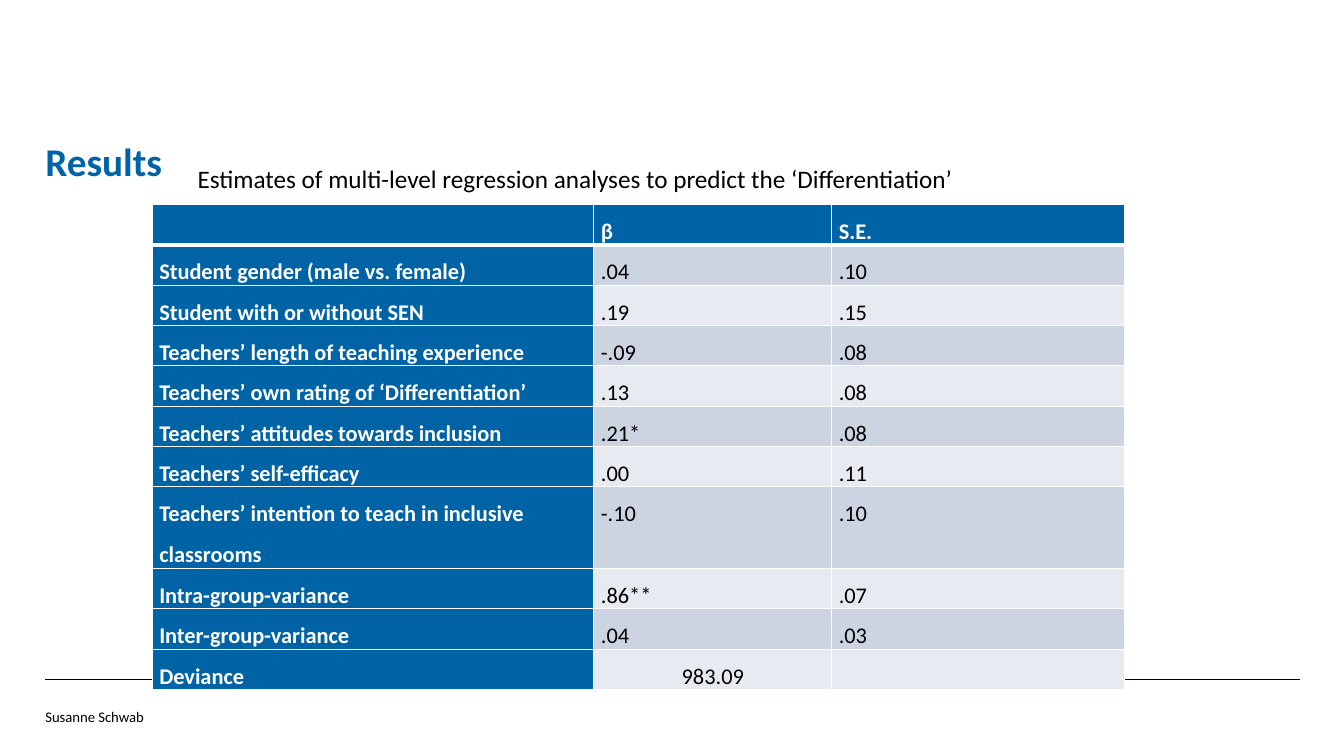
from lxml import etree
from pptx import Presentation
from pptx import util as u
from pptx.dml.color import RGBColor
from pptx.enum import shapes, text
from pptx.oxml.ns import qn

PX = 9144  # EMU per px, 100 px to the inch
FONT = "Calibri"
BLUE, WHITE, BLACK = "0063A6", "FFFFFF", "000000"
BANDS = ("CCD3E1", "E7EAF1")

COLUMN_WIDTHS = (438, 236, 290)
ROW_HEIGHT, TALL_ROW_HEIGHT, TALL_ROW = 40, 81, 7
ESTIMATES = (
    ("", "β", "S.E."),
    ("Student gender (male vs. female)", ".04", ".10"),
    ("Student with or without SEN", ".19", ".15"),
    ("Teachers’ length of teaching experience", "-.09", ".08"),
    ("Teachers’ own rating of ‘Differentiation’", ".13", ".08"),
    ("Teachers’ attitudes towards inclusion", ".21*", ".08"),
    ("Teachers’ self-efficacy", ".00", ".11"),
    ("Teachers’ intention to teach in inclusive classrooms", "-.10", ".10"),
    ("Intra-group-variance", ".86**", ".07"),
    ("Inter-group-variance", ".04", ".03"),
    ("Deviance", "983.09", ""),
)


def px(*lengths):
    return [u.Emu(length * PX) for length in lengths]


def color(hex_string):
    return RGBColor.from_string(hex_string)


def style_runs(paragraph, size, hex_string, bold=False):
    for run in paragraph.runs:
        run.font.name = FONT
        run.font.size = u.Pt(size)
        run.font.bold = bold
        run.font.color.rgb = color(hex_string)


def add_text(slide, box, wording, size, hex_string=BLACK, bold=False,
             anchor=text.MSO_ANCHOR.TOP, indent=0, spacing=None):
    frame = slide.shapes.add_textbox(*px(*box)).text_frame
    frame.word_wrap = True
    frame.vertical_anchor = anchor
    frame.margin_left, = px(indent)
    frame.margin_right = frame.margin_top = frame.margin_bottom = 0
    frame.text = wording
    paragraph = frame.paragraphs[0]
    paragraph.line_spacing = spacing
    style_runs(paragraph, size, hex_string, bold)


def add_footer(slide, box):
    left, top, width, height = box
    # Rule above the speaker's name
    rule = slide.shapes.add_connector(
        shapes.MSO_CONNECTOR.STRAIGHT, *px(left, top, left + width, top))
    rule.line.color.rgb = color(BLACK)
    rule.line.width = u.Pt(0.75)
    etree.SubElement(rule._element.spPr, qn("a:effectLst"))
    add_text(slide, (left, top + 28, 853, height - 28), "Susanne Schwab", 10.5)


def add_heading(slide, box):
    left, top, width, height = box
    add_text(slide, (left + 51, top + 68, 1244, 36),
             "Estimates of multi-level regression analyses to predict the "
             "‘Differentiation’", 18, indent=100)
    add_text(slide, box, "Results", 28, BLUE, bold=True,
             anchor=text.MSO_ANCHOR.BOTTOM, spacing=0.9)


def set_borders(cell, row):
    # A thick line divides the header from the body
    widths = {"L": 1, "R": 1, "T": 3 if row == 1 else 1, "B": 3 if row == 0 else 1}
    properties = cell._tc.get_or_add_tcPr()
    for side, points in widths.items():
        line = etree.SubElement(properties, qn(f"a:ln{side}"), w=str(u.Pt(points)))
        fill = etree.SubElement(line, qn("a:solidFill"))
        etree.SubElement(fill, qn("a:srgbClr"), val=WHITE)


def fill_cell(cell, row, column, wording):
    heading = row == 0 or column == 0
    set_borders(cell, row)
    cell.fill.solid()
    cell.fill.fore_color.rgb = color(BLUE if heading else BANDS[(row - 1) % 2])
    cell.margin_left, cell.margin_right = px(7, 7)
    cell.margin_top = cell.margin_bottom = 0
    if row == 0:
        cell.vertical_anchor = text.MSO_ANCHOR.BOTTOM
    if wording:
        cell.text_frame.text = wording
        paragraph = cell.text_frame.paragraphs[0]
        paragraph.line_spacing = 1.5
        style_runs(paragraph, 16, WHITE if heading else BLACK, heading)


def add_estimates(slide, box):
    table = slide.shapes.add_table(
        len(ESTIMATES), len(COLUMN_WIDTHS), *px(*box)).table
    for column, width in zip(table.columns, px(*COLUMN_WIDTHS)):
        column.width = width
    for row, values in enumerate(ESTIMATES):
        table.rows[row].height, = px(
            TALL_ROW_HEIGHT if row == TALL_ROW else ROW_HEIGHT)
        for column, wording in enumerate(values):
            fill_cell(table.cell(row, column), row, column, wording)
    # The deviance stands alone in its row
    deviance = table.cell(len(ESTIMATES) - 1, 1)
    deviance.text_frame.paragraphs[0].alignment = text.PP_ALIGN.CENTER


def main():
    presentation = Presentation()
    presentation.slide_width, presentation.slide_height = px(1333, 750)
    slide = presentation.slides.add_slide(presentation.slide_layouts[6])
    add_footer(slide, (45, 674, 1244, 68))
    add_heading(slide, (45, 94, 933, 90))
    add_estimates(slide, (151, 203, 964, 481))
    presentation.save("out.pptx")


if __name__ == "__main__":
    main()
